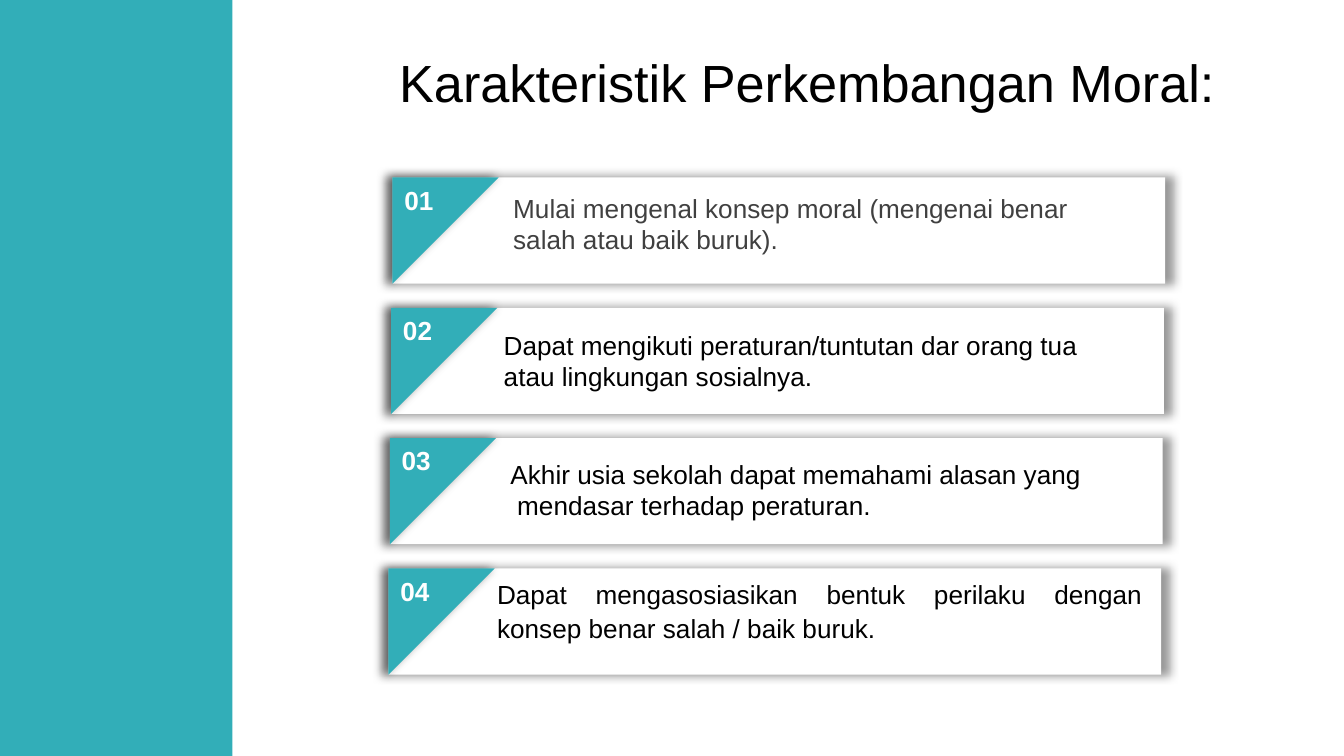
from lxml.etree import SubElement
from pptx import Presentation
from pptx.dml.color import RGBColor
from pptx.enum.shapes import MSO_SHAPE as Preset
from pptx.enum.text import MSO_ANCHOR as Anchor, MSO_AUTO_SIZE as AutoSize, PP_ALIGN as Align
from pptx.oxml.ns import qn
from pptx.util import Inches, Pt

COLORS = {"teal": "32AEB8", "white": "FFFFFF", "black": "000000", "gray": "404040"}
FONT = "Arial"
SLIDE_WIDTH = 10
SLIDE_HEIGHT = SLIDE_WIDTH * 9 / 16
CARD_LEFT, CARD_TOP, CARD_WIDTH, CARD_HEIGHT = 2.92, 1.32, 5.75, 0.79
CARD_PITCH, CARD_DRIFT = 0.97, -0.01
NUMBER_OFFSET = -0.01

# Text, its box (left, top, width, height) and its format
POINTS = [
    ("Mulai mengenal konsep moral (mengenai benar salah atau baik buruk).",
     (3.72, 1.38, 4.8, 0.57), {"color": "gray"}),
    ("Dapat mengikuti peraturan/tuntutan dar orang tua\vatau lingkungan sosialnya.",
     (3.65, 2.4, 4.8, 0.57), {}),
    ("Akhir usia sekolah dapat memahami alasan yang\vmendasar terhadap peraturan.",
     (3.7, 3.36, 4.8, 0.57), {"hanging": 0.05}),
    ("Dapat mengasosiasikan bentuk perilaku dengan konsep benar salah / baik buruk.",
     (3.6, 4.24, 5, 0.61),
     {"align": Align.JUSTIFY, "line_spacing": 1.07, "space_after": 8}),
]


def rgb(name):
    return RGBColor.from_string(COLORS[name])


def write_text(frame, text, *, size=14, color="black", bold=False, align=Align.LEFT,
               anchor=Anchor.TOP, line_spacing=None, space_after=None, hanging=0):
    frame.word_wrap = True
    frame.auto_size = AutoSize.NONE
    frame.vertical_anchor = anchor
    paragraph = frame.paragraphs[0]
    paragraph.text = text
    paragraph.alignment = align
    if line_spacing:
        paragraph.line_spacing = line_spacing
    if space_after:
        paragraph.space_after = Pt(space_after)
    if hanging:
        properties = paragraph._p.get_or_add_pPr()
        properties.set("marL", str(Inches(hanging)))
        properties.set("indent", str(-Inches(hanging)))
    for run in paragraph.runs:
        run.font.name = FONT
        run.font.size = Pt(size)
        run.font.bold = bold
        run.font.color.rgb = rgb(color)


def add_label(slide, text, box, **text_format):
    label = slide.shapes.add_textbox(*map(Inches, box))
    write_text(label.text_frame, text, **text_format)


def add_block(shapes, preset, box, color):
    block = shapes.add_shape(preset, *map(Inches, box))
    block.shadow.inherit = False
    block.fill.solid()
    block.fill.fore_color.rgb = rgb(color)
    block.line.fill.background()
    return block


def add_glow_shadow(shape):
    """Give the shape a soft, centred shadow that is slightly larger than itself."""
    effects = shape._element.spPr.find(qn("a:effectLst"))
    shadow = SubElement(effects, qn("a:outerShdw"), blurRad=str(Pt(5)), sx="102000",
                        sy="102000", algn="ctr", rotWithShape="0")
    shade = SubElement(shadow, qn("a:srgbClr"), val=COLORS["black"])
    SubElement(shade, qn("a:alpha"), val="40000")


def add_card(slide, left, top):
    card = slide.shapes.add_group_shape()
    panel = add_block(card.shapes, Preset.RECTANGLE,
                      (left, top, CARD_WIDTH, CARD_HEIGHT), "white")
    corner = add_block(card.shapes, Preset.RIGHT_TRIANGLE,
                       (left, top, CARD_HEIGHT, CARD_HEIGHT), "teal")
    corner.rotation = 90
    for part in (panel, corner):
        add_glow_shadow(part)


def add_title(slide, text):
    title = slide.shapes.title
    title.left, title.top, title.width, title.height = map(Inches, (2.87, 0.29, 6.61, 0.63))
    write_text(title.text_frame, text, size=28, anchor=Anchor.MIDDLE)


def main():
    deck = Presentation()
    deck.slide_width, deck.slide_height = Inches(SLIDE_WIDTH), Inches(SLIDE_HEIGHT)
    slide = deck.slides.add_slide(deck.slide_layouts[5])

    add_block(slide.shapes, Preset.RECTANGLE, (0, 0, 1.73, SLIDE_HEIGHT), "teal")
    add_title(slide, "Karakteristik Perkembangan Moral:")
    for index, (point, box, text_format) in enumerate(POINTS):
        left = CARD_LEFT + index * CARD_DRIFT
        top = CARD_TOP + index * CARD_PITCH
        add_card(slide, left, top)
        add_label(slide, f"{index + 1:02}", (left + NUMBER_OFFSET, top, 0.58, 0.34),
                  color="white", bold=True)
        add_label(slide, point, box, **text_format)

    deck.save("out.pptx")


if __name__ == "__main__":
    main()
